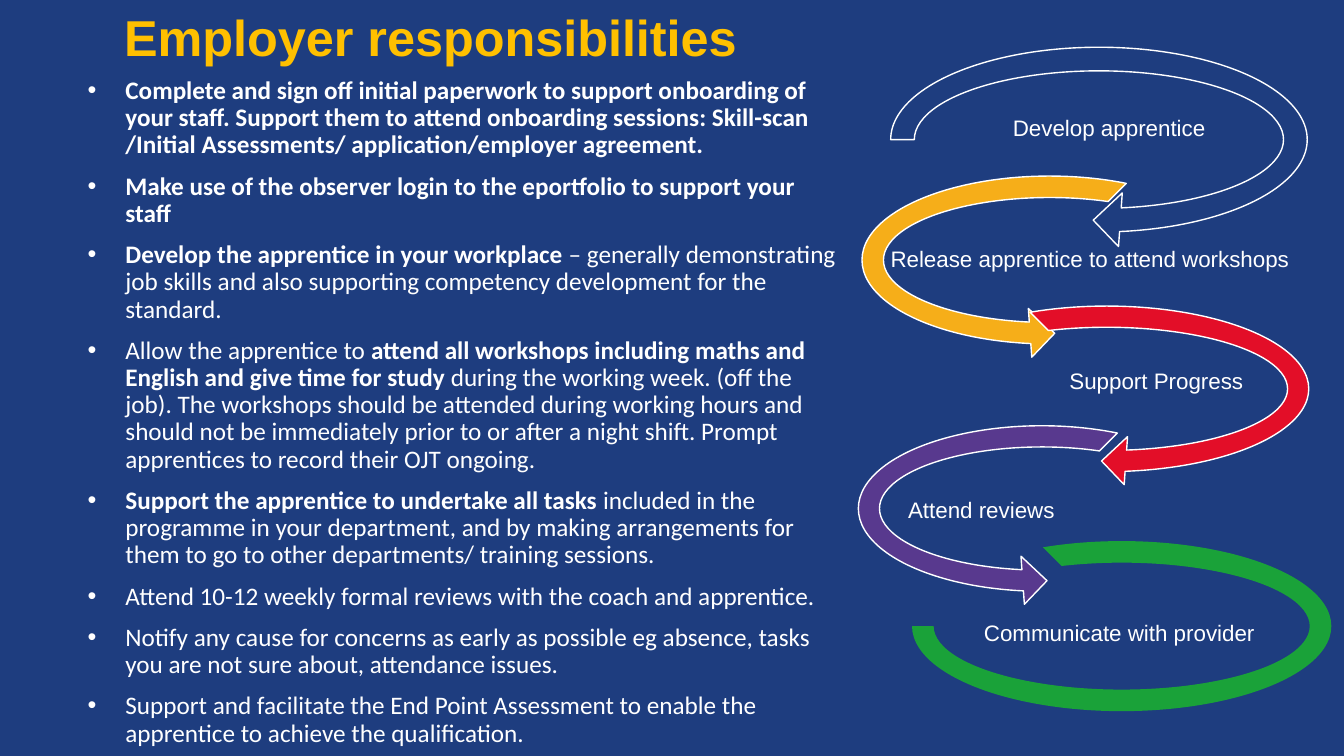
from dataclasses import dataclass

from lxml import etree
from pptx import Presentation
from pptx.dml.color import RGBColor
from pptx.enum import shapes, text
from pptx.oxml import ns
from pptx.util import Pt

COLORS = {
    "navy": "1E3D7F",
    "gold": "FFC000",
    "white": "FFFFFF",
    "purple": "58398E",
    "green": "1AA239",
    "amber": "F6AE19",
    "red": "E30E28",
}
Box = tuple[float, float, float, float]  # left, top, width, height in points
Run = tuple[str, bool]  # wording, bold
BULLET_INDENT = 27
SHAPE = shapes.MSO_SHAPE


@dataclass
class Stage:
    label: str
    label_box: Box
    kind: SHAPE
    arrow_box: Box
    adjustments: tuple[float, ...]
    color: str
    outlined: bool = True


def arrow_settings(end: float, start: float) -> tuple[float, ...]:
    return (0.11, 11.42, end, start, 0.125)


STAGES = [
    Stage("Develop apprentice", (684, 70.5, 216.5, 43), SHAPE.CIRCULAR_ARROW,
          (625.5, 23, 319, 153.5), arrow_settings(45, 108), "navy"),
    Stage("Attend reviews", (611, 346.5, 180, 38), SHAPE.LEFT_CIRCULAR_ARROW,
          (603.5, 294.5, 281.5, 137.5), arrow_settings(63, 189), "purple"),
    Stage("Communicate with provider", (685, 433.5, 229, 39.5), SHAPE.BLOCK_ARC,
          (651.5, 386.5, 299.5, 121.5), (135, 108, 0.127), "green", False),
    Stage("Release apprentice to attend workshops", (633, 166.5, 291, 39),
          SHAPE.LEFT_CIRCULAR_ARROW, (606, 116, 287.5, 139.5),
          arrow_settings(63, 189), "amber"),
    Stage("Support Progress", (736, 254, 180, 38), SHAPE.CIRCULAR_ARROW,
          (636.5, 209, 308, 137.5), arrow_settings(45, 135), "red"),
]

DUTIES: list[list[Run]] = [
    [("Complete and sign off initial paperwork to support onboarding of your staff. "
      "Support them to attend onboarding sessions: Skill-scan /Initial Assessments/ "
      "application/employer agreement.", True)],
    [("Make use of the observer login to the eportfolio to support your staff", True)],
    [("Develop the apprentice in your workplace", True),
     (" – generally demonstrating job skills and also supporting competency "
      "development for the standard.", False)],
    [("Allow the apprentice to ", False),
     ("attend all workshops including maths and English and give time for study", True),
     (" during the working week. (off the job). The workshops should be attended "
      "during working hours and should not be immediately prior to or after a night "
      "shift. Prompt apprentices to record their OJT ongoing.", False)],
    [("Support the apprentice to undertake all tasks", True),
     (" included in the programme in your department, and by making arrangements "
      "for them to go to other departments/ training sessions.", False)],
    [("Attend 10-12 weekly formal reviews with the coach and apprentice.", False)],
    [("Notify any cause for concerns as early as possible eg absence, tasks you are "
      "not sure about, attendance issues.", False)],
    [("Support and facilitate the End Point Assessment to enable the apprentice to "
      "achieve the qualification.", False)],
]


def rgb(name: str) -> RGBColor:
    return RGBColor.from_string(COLORS[name])


def points(box: Box) -> list[Pt]:
    return [Pt(length) for length in box]


def add_text_frame(slide, box: Box, anchor=text.MSO_ANCHOR.TOP):
    frame = slide.shapes.add_textbox(*points(box)).text_frame
    frame.word_wrap = True
    frame.vertical_anchor = anchor
    return frame


def style_paragraph(paragraph, font_name: str, size: float, color: str) -> None:
    paragraph.line_spacing = 0.9
    paragraph.font.name = font_name
    paragraph.font.size = Pt(size)
    paragraph.font.color.rgb = rgb(color)


def add_bullet(paragraph) -> None:
    properties = paragraph._p.get_or_add_pPr()
    properties.set("marL", str(Pt(BULLET_INDENT)))
    properties.set("indent", str(-Pt(BULLET_INDENT)))
    font = etree.SubElement(properties, ns.qn("a:buFont"))
    font.set("typeface", "Arial")
    etree.SubElement(properties, ns.qn("a:buChar")).set("char", "•")


def add_title(slide) -> None:
    frame = add_text_frame(slide, (81.5, -1.5, 555, 60.5), text.MSO_ANCHOR.MIDDLE)
    paragraph = frame.paragraphs[0]
    paragraph.text = "Employer responsibilities"
    style_paragraph(paragraph, "Arial", 36, "gold")
    paragraph.font.bold = True


def add_duties(slide) -> None:
    frame = add_text_frame(slide, (55.5, 52, 551.5, 484))
    for index, duty in enumerate(DUTIES):
        paragraph = frame.add_paragraph() if index else frame.paragraphs[0]
        add_bullet(paragraph)
        style_paragraph(paragraph, "Calibri", 18, "white")
        paragraph.space_before = Pt(10 if index else 0)
        for wording, bold in duty:
            run = paragraph.add_run()
            run.text = wording
            run.font.bold = bold


def add_stage(slide, stage: Stage) -> None:
    # Curved arrow
    arrow = slide.shapes.add_shape(stage.kind, *points(stage.arrow_box))
    arrow.shadow.inherit = False
    for index, value in enumerate(stage.adjustments):
        arrow.adjustments[index] = value
    arrow.fill.solid()
    arrow.fill.fore_color.rgb = rgb(stage.color)
    if stage.outlined:
        arrow.line.color.rgb = rgb("white")
        arrow.line.width = Pt(1)
    else:
        arrow.line.fill.background()

    # Label
    frame = add_text_frame(slide, stage.label_box, text.MSO_ANCHOR.MIDDLE)
    frame.margin_left = frame.margin_right = Pt(0.8)
    frame.margin_top = frame.margin_bottom = Pt(0.8)
    paragraph = frame.paragraphs[0]
    paragraph.text = stage.label
    paragraph.alignment = text.PP_ALIGN.CENTER
    style_paragraph(paragraph, "Arial", 16, "white")


def main() -> None:
    presentation = Presentation()
    presentation.slide_width, presentation.slide_height = Pt(960), Pt(540)
    slide = presentation.slides.add_slide(presentation.slide_layouts[6])
    slide.background.fill.solid()
    slide.background.fill.fore_color.rgb = rgb("navy")

    add_title(slide)
    add_duties(slide)
    for stage in STAGES:
        add_stage(slide, stage)
    presentation.save("out.pptx")


if __name__ == "__main__":
    main()
